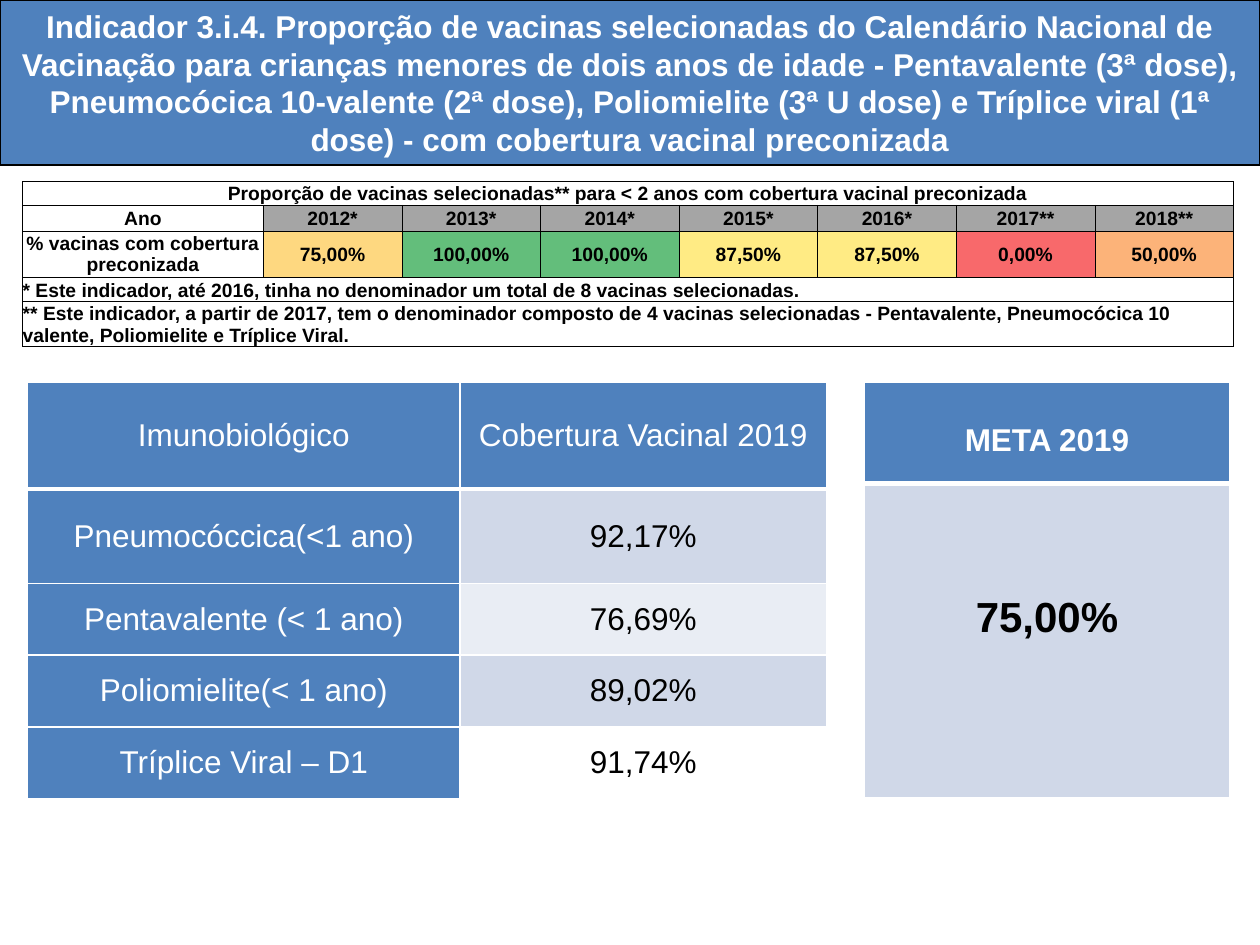
import pptx
import pptx.dml.color
import pptx.enum.text
import pptx.oxml
import pptx.oxml.ns
import pptx.util
from pptx.util import Inches

BLUE, WHITE, BLACK = "4F81BD", "FFFFFF", "000000"
PALE, PALER, GREY = "D0D8E8", "E9EDF4", "A5A5A5"
ORANGE, GREEN, YELLOW, RED, PEACH = "FED880", "63BE7B", "FFEB84", "F8696B", "FCB379"
ALIGN = pptx.enum.text.PP_ALIGN
ANCHOR = pptx.enum.text.MSO_ANCHOR


def rgb(color):
    return pptx.dml.color.RGBColor.from_string(color)


class SlideBuilder:
    font = "Arial"

    def __init__(self, prs):
        self.slide = prs.slides.add_slide(prs.slide_layouts[5])

    def add_text(self, tf, text, size, color, bold, align=ALIGN.CENTER):
        p = tf.paragraphs[0]
        p.alignment = align
        r = p.add_run()
        r.text = text
        r.font.name = self.font
        r.font.size = pptx.util.Pt(size)
        r.font.bold = bold
        r.font.color.rgb = rgb(color)

    def title(self, text, left, top, width, height):
        sp = self.slide.shapes.title
        sp.left, sp.top = Inches(left), Inches(top)
        sp.width, sp.height = Inches(width), Inches(height)
        sp.fill.solid()
        sp.fill.fore_color.rgb = rgb(BLUE)
        sp.line.color.rgb = rgb(BLACK)
        sp.line.width = pptx.util.Pt(0.75)
        tf = sp.text_frame
        tf.word_wrap = True
        tf.auto_size = pptx.enum.text.MSO_AUTO_SIZE.NONE
        tf.vertical_anchor = ANCHOR.MIDDLE
        self.add_text(tf, text, 18, WHITE, True)

    def table(self, left, top, cols, rows):
        """Add an unstyled table with the given column widths and row heights."""
        frame = self.slide.shapes.add_table(
            len(rows), len(cols), Inches(left), Inches(top),
            Inches(sum(cols)), Inches(sum(rows)))
        table = frame.table
        table.first_row = table.horz_banding = False
        for column, width in zip(table.columns, cols):
            column.width = Inches(width)
        for row, height in zip(table.rows, rows):
            row.height = Inches(height)
        return table

    def borders(self, cell, color, width, bottom=None):
        tc_pr = cell._tc.get_or_add_tcPr()
        for i, side in enumerate("LRTB"):
            points = bottom if side == "B" and bottom else width
            tc_pr.insert(i, pptx.oxml.parse_xml(
                f'<a:ln{side} {pptx.oxml.ns.nsdecls("a")} w="{pptx.util.Pt(points)}">'
                f'<a:solidFill><a:srgbClr val="{color}"/></a:solidFill></a:ln{side}>'))

    def cell(self, cell, text, size, color, fill=None, bold=False,
             align=ALIGN.CENTER, anchor=ANCHOR.MIDDLE, margins=(0, 0, 0, 0)):
        """Fill in a cell; margins run left, top, right, bottom."""
        if fill:
            cell.fill.solid()
            cell.fill.fore_color.rgb = rgb(fill)
        else:
            cell.fill.background()
        cell.vertical_anchor = anchor
        (cell.margin_left, cell.margin_top,
         cell.margin_right, cell.margin_bottom) = map(Inches, margins)
        if text:
            self.add_text(cell.text_frame, text, size, color, bold, align)


def add_goal(builder):
    table = builder.table(6.86, 3.03, [2.9], [0.81, 2.49])
    head, value = table.cell(0, 0), table.cell(1, 0)
    builder.cell(head, "META 2019", 18, WHITE, BLUE, True, margins=(0.1, 0.13, 0.1, 0))
    builder.cell(value, "75,00%", 24, BLACK, PALE, True, margins=(0.1, 0, 0.1, 0.36))
    builder.borders(head, WHITE, 1, bottom=3)
    builder.borders(value, WHITE, 1)


def add_history(builder):
    heading = "Proporção de vacinas selecionadas** para < 2 anos com cobertura vacinal preconizada"
    notes = [
        "* Este indicador, até 2016, tinha no denominador um total de 8 vacinas selecionadas.",
        "** Este indicador, a partir de 2017, tem o denominador composto de 4 vacinas "
        "selecionadas - Pentavalente, Pneumocócica 10 valente, Poliomielite e Tríplice Viral.",
    ]
    columns = [
        ("Ano", None, "% vacinas com cobertura preconizada", None),
        ("2012*", GREY, "75,00%", ORANGE),
        ("2013*", GREY, "100,00%", GREEN),
        ("2014*", GREY, "100,00%", GREEN),
        ("2015*", GREY, "87,50%", YELLOW),
        ("2016*", GREY, "87,50%", YELLOW),
        ("2017**", GREY, "0,00%", RED),
        ("2018**", GREY, "50,00%", PEACH),
    ]
    table = builder.table(0.18, 1.44, [1.91] + [1.1] * 7, [0.19, 0.21, 0.36, 0.19, 0.36])
    last = len(columns) - 1
    for row in (0, 3, 4):
        table.cell(row, 0).merge(table.cell(row, last))
    builder.cell(table.cell(0, 0), heading, 11, BLACK, bold=True)
    for col, (year, year_fill, value, value_fill) in enumerate(columns):
        builder.cell(table.cell(1, col), year, 11, BLACK, year_fill, True)
        builder.cell(table.cell(2, col), value, 11, BLACK, value_fill, True)
    for row, note in enumerate(notes, 3):
        builder.cell(table.cell(row, 0), note, 11, BLACK, bold=True,
                     align=ALIGN.LEFT, anchor=ANCHOR.BOTTOM)
    for cell in table.iter_cells():
        if cell.is_spanned:
            builder.cell(cell, "", 11, BLACK)
        builder.borders(cell, BLACK, 0.5)


def add_coverage(builder):
    rows = [
        ("Imunobiológico", "Cobertura Vacinal 2019", WHITE, BLUE),
        ("Pneumocóccica(<1 ano)", "92,17%", BLACK, PALE),
        ("Pentavalente (< 1 ano)", "76,69%", BLACK, PALER),
        ("Poliomielite(< 1 ano)", "89,02%", BLACK, PALE),
        ("Tríplice Viral – D1", "91,74%", BLACK, WHITE),
    ]
    table = builder.table(0.22, 3.03, [3.43, 2.91], [0.85, 0.75] + [0.57] * 3)
    margins = (0.05, 0, 0.05, 0)
    for i, (vaccine, value, color, fill) in enumerate(rows):
        builder.cell(table.cell(i, 0), vaccine, 18, WHITE, BLUE, margins=margins)
        builder.cell(table.cell(i, 1), value, 18, color, fill, margins=margins)
        for col in range(2):
            builder.borders(table.cell(i, col), WHITE, 1, bottom=None if i else 3)


def main():
    prs = pptx.Presentation()
    prs.slide_width, prs.slide_height = Inches(10), Inches(7.5)
    builder = SlideBuilder(prs)
    builder.title(
        "Indicador 3.i.4. Proporção de vacinas selecionadas do Calendário Nacional de "
        "Vacinação para crianças menores de dois anos de idade - Pentavalente (3ª dose), "
        "Pneumocócica 10-valente (2ª dose), Poliomielite (3ª U dose) e Tríplice viral "
        "(1ª dose) - com cobertura vacinal preconizada", 0, 0, 10, 1.31)
    add_goal(builder)
    add_history(builder)
    add_coverage(builder)
    prs.save("out.pptx")


if __name__ == "__main__":
    main()
